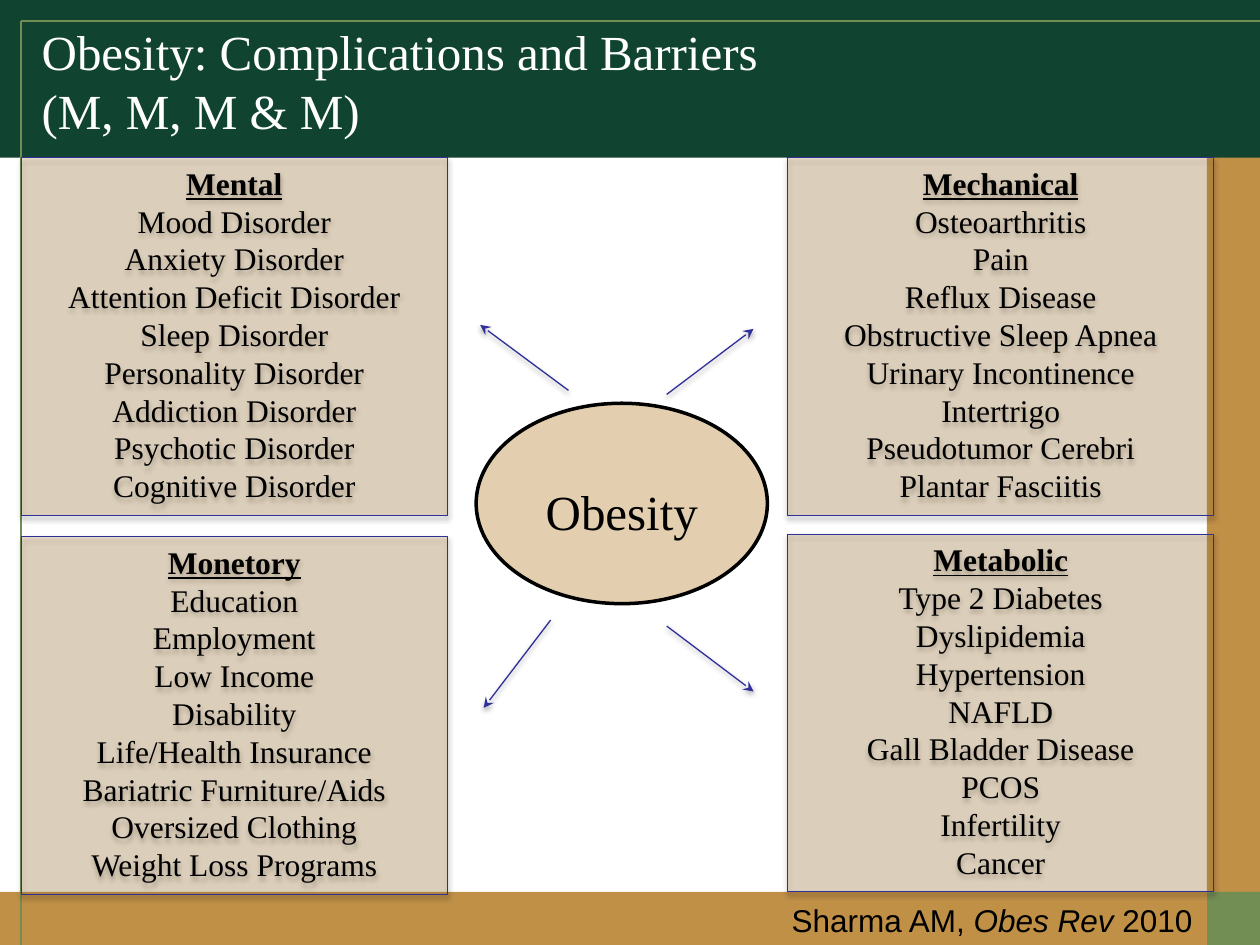
from lxml.etree import SubElement
from pptx import Presentation
from pptx.dml.color import RGBColor
from pptx.enum.shapes import MSO_CONNECTOR, MSO_SHAPE
from pptx.enum.text import MSO_ANCHOR, MSO_AUTO_SIZE, PP_ALIGN
from pptx.oxml import parse_xml
from pptx.oxml.ns import nsdecls, qn
from pptx.util import Cm, Pt

COLORS = {
    name: RGBColor.from_string(value)
    for name, value in {
        "ochre": "C09047", "sage": "738E54", "forest": "104431",
        "indigo": "2F2F98", "black": "000000", "white": "FFFFFF",
    }.items()
}
SERIF = "Times New Roman"
SHADOW = (
    f'<a:effectLst {nsdecls("a")}>'
    '<a:outerShdw blurRad="40000" dist="20000" dir="5400000" rotWithShape="0">'
    '<a:srgbClr val="000000"><a:alpha val="38000"/></a:srgbClr>'
    '</a:outerShdw></a:effectLst>'
)
NO_SHADOW = f'<a:effectLst {nsdecls("a")}/>'


def add_panel(kind, box, color, opacity=100, line=None, width=0.75, effects=NO_SHADOW):
    """Add a filled shape; box is left, top, width, height in cm."""
    shape = slide.shapes.add_shape(kind, *map(Cm, box))
    shape.fill.solid()
    shape.fill.fore_color.rgb = COLORS[color]
    if opacity < 100:
        fill_color = shape.element.spPr.find(qn("a:solidFill"))[0]
        SubElement(fill_color, qn("a:alpha"), val=str(opacity * 1000))
    if line:
        shape.line.color.rgb = COLORS[line]
        shape.line.width = Pt(width)
    else:
        shape.line.fill.background()
    shape.element.spPr.append(parse_xml(effects))
    return shape


def add_line(points, color, width, effects=NO_SHADOW, arrow=False):
    connector = slide.shapes.add_connector(MSO_CONNECTOR.STRAIGHT, *map(Cm, points))
    connector.line.color.rgb = COLORS[color]
    connector.line.width = Pt(width)
    properties = connector.element.spPr
    if arrow:
        SubElement(properties.find(qn("a:ln")), qn("a:tailEnd"), type="stealth")
    properties.append(parse_xml(effects))


presentation = Presentation()
presentation.slide_width = Cm(25.4)
presentation.slide_height = Cm(19.05)
slide = presentation.slides.add_slide(presentation.slide_layouts[5])

# Frame
for box, color in [
    ((24.33, 0, 1.07, 17.98), "ochre"),
    ((24.33, 17.98, 1.07, 1.07), "sage"),
    ((0, 17.98, 24.33, 1.07), "ochre"),
    ((0, 0, 25.4, 3.18), "forest"),
]:
    add_panel(MSO_SHAPE.RECTANGLE, box, color)
for points in [(0.43, 19.05, 0.43, 0.43), (0.43, 0.43, 25.4, 0.43)]:
    add_line(points, "sage", 1)

# Title, brought in front of the frame
title = slide.shapes.title
title.element.getparent().append(title.element)
title.left, title.top, title.width, title.height = map(Cm, (0.84, 0.43, 25.4, 3.18))
frame = title.text_frame
frame.text = "Obesity: Complications and Barriers\v(M, M, M & M)"
frame.auto_size = MSO_AUTO_SIZE.NONE
frame.vertical_anchor = MSO_ANCHOR.TOP
frame.margin_left = frame.margin_right = frame.margin_top = frame.margin_bottom = 0
paragraph = frame.paragraphs[0]
paragraph.alignment = PP_ALIGN.LEFT
paragraph.line_spacing = Pt(33.6)
for run in paragraph.runs:
    run.font.name, run.font.size = SERIF, Pt(28)
    run.font.color.rgb = COLORS["white"]

# Centre
center = add_panel(MSO_SHAPE.OVAL, (9.6, 8.13, 5.87, 4.04), "ochre", 43, "black", 2)
frame = center.text_frame
frame.text = "Obesity"
frame.margin_top = Cm(0.41)
frame.vertical_anchor = MSO_ANCHOR.MIDDLE
paragraph = frame.paragraphs[0]
paragraph.alignment = PP_ALIGN.CENTER
font = paragraph.runs[0].font
font.name, font.size = SERIF, Pt(28)
font.color.rgb = COLORS["black"]

# Four groups of complications, each with its arrow
groups = [
    (0.43, 3.18, (11.46, 7.87, 9.68, 6.55), [
        "Mental", "Mood Disorder", "Anxiety Disorder", "Attention Deficit Disorder",
        "Sleep Disorder", "Personality Disorder", "Addiction Disorder",
        "Psychotic Disorder", "Cognitive Disorder"]),
    (15.88, 10.77, (13.44, 12.62, 15.19, 13.94), [
        "Metabolic", "Type 2 Diabetes", "Dyslipidemia", "Hypertension", "NAFLD",
        "Gall Bladder Disease", "PCOS", "Infertility", "Cancer"]),
    (15.88, 3.18, (13.44, 7.95, 15.19, 6.63), [
        "Mechanical", "Osteoarthritis", "Pain", "Reflux Disease",
        "Obstructive Sleep Apnea", "Urinary Incontinence", "Intertrigo",
        "Pseudotumor Cerebri", "Plantar Fasciitis"]),
    (0.43, 10.82, (11.1, 12.5, 9.75, 14.27), [
        "Monetory", "Education", "Employment", "Low Income", "Disability",
        "Life/Health Insurance", "Bariatric Furniture/Aids", "Oversized Clothing",
        "Weight Loss Programs"]),
]
for left, top, arrow_points, items in groups:
    panel = add_panel(MSO_SHAPE.RECTANGLE, (left, top, 8.59, 7.21), "ochre", 26,
                      "indigo", effects=SHADOW)
    frame = panel.text_frame
    frame.text = "\n".join(items)
    frame.vertical_anchor = MSO_ANCHOR.TOP
    for index, paragraph in enumerate(frame.paragraphs):
        paragraph.alignment = PP_ALIGN.CENTER
        paragraph.line_spacing = Pt(21.6)
        font = paragraph.runs[0].font
        font.name, font.size = SERIF, Pt(18)
        font.bold = font.underline = index == 0
        font.color.rgb = COLORS["black"]
    add_line(arrow_points, "indigo", 0.75, SHADOW, arrow=True)

# Citation
citation = slide.shapes.add_textbox(*map(Cm, (15.67, 18.03, 8.66, 1.02)))
frame = citation.text_frame
frame.word_wrap = False
frame.auto_size = MSO_AUTO_SIZE.SHAPE_TO_FIT_TEXT
paragraph = frame.paragraphs[0]
paragraph.alignment = PP_ALIGN.CENTER
for text, italic in [("Sharma AM, ", False), ("Obes Rev", True), (" 2010", False)]:
    run = paragraph.add_run()
    run.text = text
    run.font.name, run.font.size, run.font.italic = "Arial", Pt(18), italic
    run.font.color.rgb = COLORS["black"]

presentation.save("out.pptx")
